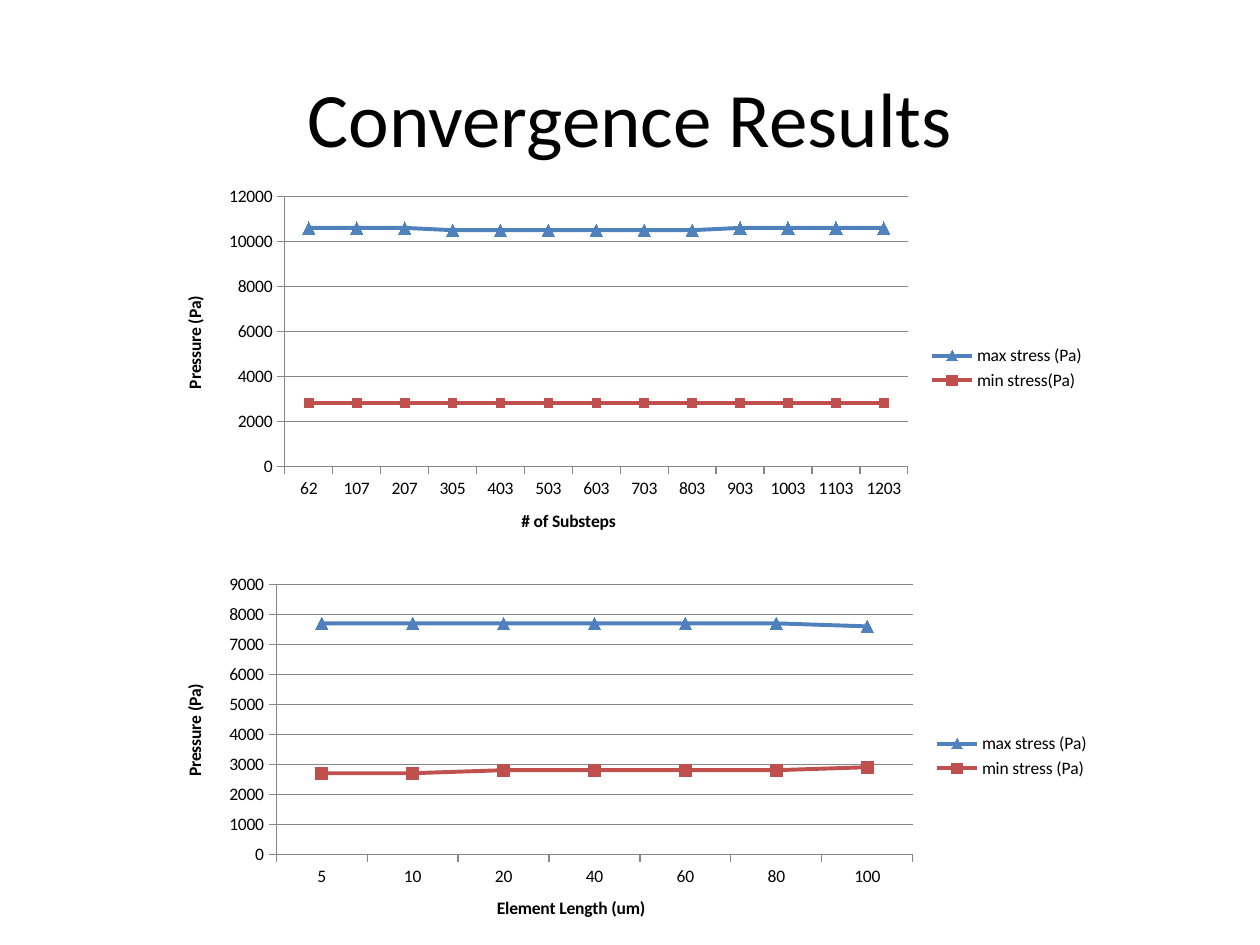
import pptx
import pptx.chart.data
import pptx.dml.color
import pptx.enum.chart
import pptx.enum.text
import pptx.util

Cm = pptx.util.Cm
Pt = pptx.util.Pt
Kind = pptx.enum.chart.XL_CHART_TYPE
Marker = pptx.enum.chart.XL_MARKER_STYLE

BLACK = pptx.dml.color.RGBColor(0x00, 0x00, 0x00)
GRAY = pptx.dml.color.RGBColor(0x87, 0x87, 0x87)
BLUE = pptx.dml.color.RGBColor(0x4F, 0x81, 0xBD)
RED = pptx.dml.color.RGBColor(0xC0, 0x50, 0x4D)


class ResultsPage:
    """Holds the text style and the current slide."""

    font_name = "Calibri"

    def __init__(self, deck):
        self.page = deck.slides.add_slide(deck.slide_layouts[5])

    def set_font(self, font, size, bold=False):
        values = {"name": self.font_name, "size": Pt(size), "bold": bold}
        for name, value in values.items():
            setattr(font, name, value)
        font.color.rgb = BLACK

    def add_title(self, text, left, top, width, height):
        box = self.page.shapes.title
        places = {"left": left, "top": top, "width": width, "height": height}
        for name, value in places.items():
            setattr(box, name, Cm(value))
        box.text_frame.vertical_anchor = pptx.enum.text.MSO_ANCHOR.MIDDLE
        para = box.text_frame.paragraphs[0]
        para.alignment = pptx.enum.text.PP_ALIGN.CENTER
        span = para.add_run()
        span.text = text
        self.set_font(span.font, 44)

    def format_axis(self, axis, title):
        axis.major_tick_mark = pptx.enum.chart.XL_TICK_MARK.OUTSIDE
        axis.minor_tick_mark = pptx.enum.chart.XL_TICK_MARK.NONE
        axis.format.line.color.rgb = GRAY
        axis.format.line.width = Pt(0.75)
        span = axis.axis_title.text_frame.paragraphs[0].add_run()
        span.text = title
        self.set_font(span.font, 10, bold=True)

    def format_series(self, series, color, marker, size):
        series.smooth = False
        series.format.line.color.rgb = color
        series.format.line.width = Pt(2.25)
        series.marker.style = marker
        series.marker.size = size
        series.marker.format.fill.solid()
        series.marker.format.fill.fore_color.rgb = color
        series.marker.format.line.color.rgb = color
        series.marker.format.line.width = Pt(0.75)

    def add_line_chart(self, kind, place, category_title, categories, lines):
        data = pptx.chart.data.CategoryChartData()
        data.categories = categories
        for name, values, *_ in lines:
            data.add_series(name, values)
        frame = self.page.shapes.add_chart(kind, *map(Cm, place), data)
        chart = frame.chart
        chart.has_title = False
        self.set_font(chart.font, 10)
        chart.plots[0].vary_by_categories = False

        # Legend and axes
        chart.has_legend = True
        chart.legend.position = pptx.enum.chart.XL_LEGEND_POSITION.RIGHT
        chart.legend.include_in_layout = False
        self.format_axis(chart.category_axis, category_title)
        self.format_axis(chart.value_axis, "Pressure (Pa)")
        chart.value_axis.has_major_gridlines = True
        grid_line = chart.value_axis.major_gridlines.format.line
        grid_line.color.rgb = GRAY
        grid_line.width = Pt(0.75)

        for series, (_, _, *style) in zip(chart.plots[0].series, lines):
            self.format_series(series, *style)


def main():
    deck = pptx.Presentation()
    deck.slide_width, deck.slide_height = Cm(25.4), Cm(19.05)
    results = ResultsPage(deck)
    results.add_title("Convergence Results", 1.27, 0.76, 22.86, 3.18)

    # Mesh convergence
    results.add_line_chart(
        Kind.LINE_MARKERS, (3.18, 11.43, 19.05, 7.62), "Element Length (um)",
        ["5", "10", "20", "40", "60", "80", "100"],
        [("max stress (Pa)", [7700] * 6 + [7600], BLUE, Marker.TRIANGLE, 7),
         ("min stress (Pa)", [2700] * 2 + [2800] * 4 + [2900],
          RED, Marker.SQUARE, 7)])

    # Substep convergence, with the maximum stacked on the minimum
    substeps = [62, 107, 207, 305] + list(range(403, 1204, 100))
    results.add_line_chart(
        Kind.LINE_MARKERS_STACKED, (3.18, 3.61, 18.95, 7.62), "# of Substeps",
        [str(count) for count in substeps],
        [("min stress(Pa)", [2800] * 13, RED, Marker.SQUARE, 5),
         ("max stress (Pa)", [7800] * 3 + [7700] * 6 + [7800] * 4,
          BLUE, Marker.TRIANGLE, 7)])

    deck.save("out.pptx")


if __name__ == "__main__":
    main()
